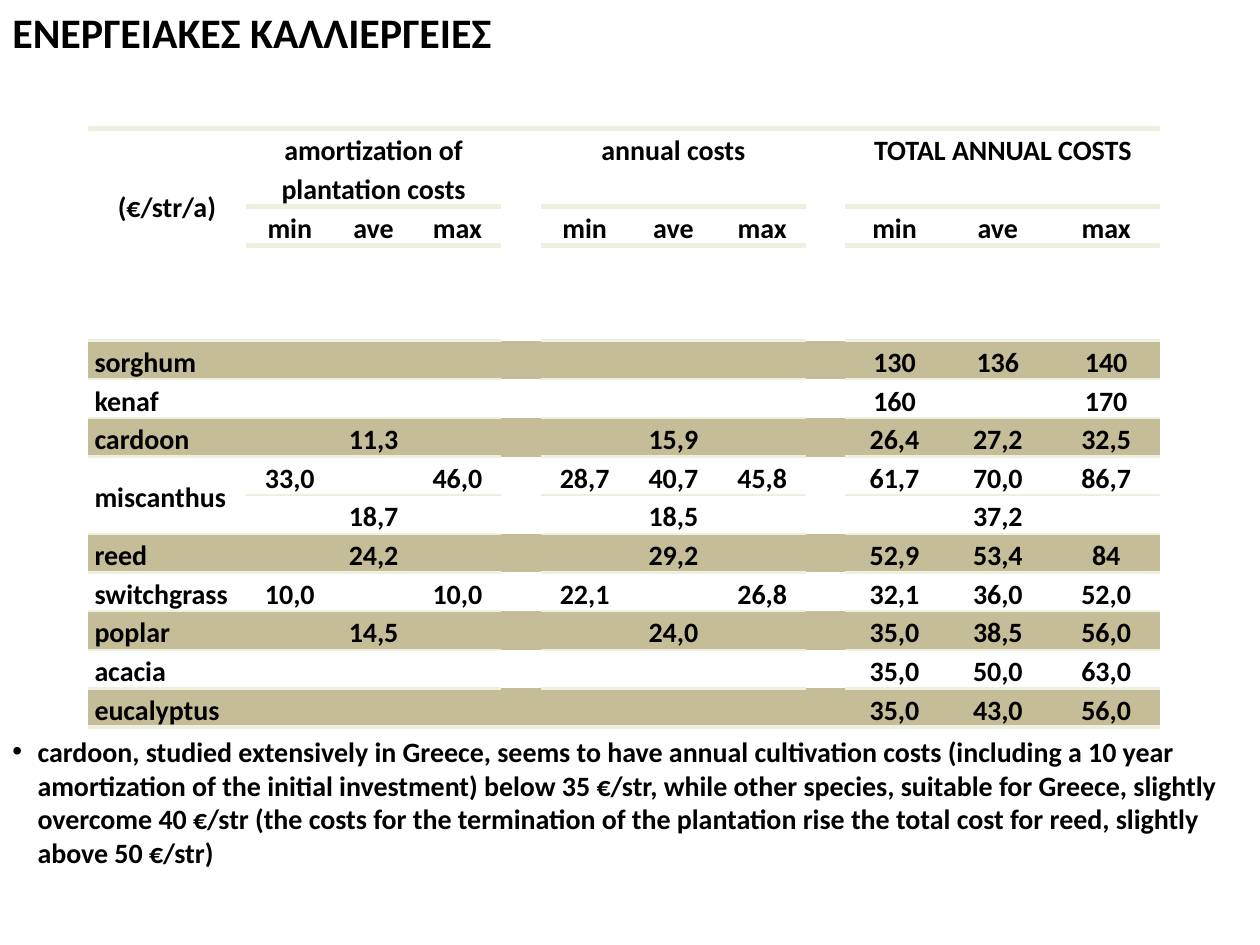
"""Build a slide comparing the annual costs of energy crops."""
from dataclasses import dataclass

from lxml import etree
from pptx import Presentation
from pptx.dml.color import RGBColor
from pptx.enum.text import MSO_ANCHOR, MSO_AUTO_SIZE, PP_ALIGN
from pptx.oxml.ns import qn
from pptx.util import Inches, Pt

CENTER, LEFT = PP_ALIGN.CENTER, PP_ALIGN.LEFT
TOP, MIDDLE = MSO_ANCHOR.TOP, MSO_ANCHOR.MIDDLE
GROW = MSO_AUTO_SIZE.SHAPE_TO_FIT_TEXT


@dataclass(frozen=True)
class Theme:
    font: str = "Calibri"
    ink: str = "000000"
    band: str = "C4BD97"
    rule: str = "EBF1DE"
    title_size: float = 24
    body_size: float = 16
    thick: float = 3
    thin: float = 1.5


THEME = Theme()
NO_STYLE = "{2D5ABB26-0587-4C30-8999-92F81FD0307C}"

TITLE = "ΕΝΕΡΓΕΙΑΚΕΣ ΚΑΛΛΙΕΡΓΕΙΕΣ"
NOTE = (
    "cardoon, studied extensively in Greece, seems to have annual cultivation costs "
    "(including a 10 year amortization of the initial investment) below 35 €/str, while "
    "other species, suitable for Greece, slightly overcome 40 €/str (the costs for the "
    "termination of the plantation rise the total cost for reed, slightly above 50 €/str)"
)
UNIT = "(€/str/a)"
GROUPS = {
    1: "amortization of plantation costs",
    5: "annual costs",
    9: "TOTAL ANNUAL COSTS",
}
MEASURES = ("min", "ave", "max")
CROPS = [
    ("sorghum", [("", "", ""), ("", "", ""), ("130", "136", "140")]),
    ("kenaf", [("", "", ""), ("", "", ""), ("160", "", "170")]),
    ("cardoon", [("", "11,3", ""), ("", "15,9", ""), ("26,4", "27,2", "32,5")]),
    ("miscanthus", [("33,0", "", "46,0"), ("28,7", "40,7", "45,8"), ("61,7", "70,0", "86,7")]),
    ("", [("", "18,7", ""), ("", "18,5", ""), ("", "37,2", "")]),
    ("reed", [("", "24,2", ""), ("", "29,2", ""), ("52,9", "53,4", "84")]),
    ("switchgrass", [("10,0", "", "10,0"), ("22,1", "", "26,8"), ("32,1", "36,0", "52,0")]),
    ("poplar", [("", "14,5", ""), ("", "24,0", ""), ("35,0", "38,5", "56,0")]),
    ("acacia", [("", "", ""), ("", "", ""), ("35,0", "50,0", "63,0")]),
    ("eucalyptus", [("", "", ""), ("", "", ""), ("35,0", "43,0", "56,0")]),
]
BANDED = {"sorghum", "cardoon", "reed", "poplar", "eucalyptus"}

COLUMN_WIDTHS = [1.25, 0.7, 0.63, 0.7, 0.31, 0.7, 0.71, 0.7, 0.31, 0.78, 0.86, 0.86]
HEADER_HEIGHTS = [0.62, 0.3, 0.71]
BODY_HEIGHT = 3.07
ROW_HEIGHTS = HEADER_HEIGHTS + [BODY_HEIGHT / len(CROPS)] * len(CROPS)
HEADER_COUNT = len(HEADER_HEIGHTS)
ROW_COUNT = len(ROW_HEIGHTS)
GAP_COLUMNS = {min(GROUPS) + 3, max(GROUPS) - 1}
SPLIT_ROW = HEADER_COUNT + [name for name, _ in CROPS].index("")


def add_span(para, text, size):
    span = para.add_run()
    span.text = text
    span.font.name = THEME.font
    span.font.size = Pt(size)
    span.font.bold = True
    span.font.color.rgb = RGBColor.from_string(THEME.ink)


def add_text_box(page, top, height, text, size, bulleted=False):
    box = page.shapes.add_textbox(0, Inches(top), Inches(10), Inches(height))
    frame = box.text_frame
    frame.word_wrap = True
    frame.auto_size = GROW
    para = frame.paragraphs[0]
    if bulleted:
        properties = para._p.get_or_add_pPr()
        properties.set("marL", str(Inches(0.2)))
        properties.set("indent", str(Inches(-0.2)))
        font = etree.SubElement(properties, qn("a:buFont"))
        font.set("typeface", "Arial")
        etree.SubElement(properties, qn("a:buChar")).set("char", "•")
    add_span(para, text, size)


def rule_width(boundary, column):
    if boundary in (0, ROW_COUNT):
        return THEME.thick
    if column in GAP_COLUMNS or boundary == SPLIT_ROW:
        return 0
    if boundary < HEADER_COUNT:
        return THEME.thick if column else 0
    return THEME.thin


def add_rule(cell, tag, width):
    if not width:
        return
    line = etree.SubElement(cell._tc.get_or_add_tcPr(), qn(tag))
    line.set("w", str(Pt(width)))
    fill = etree.SubElement(line, qn("a:solidFill"))
    etree.SubElement(fill, qn("a:srgbClr")).set("val", THEME.rule)


def style_cell(cell, row, column):
    cell.margin_left = cell.margin_right = Inches(0.05)
    cell.margin_top = cell.margin_bottom = 0
    add_rule(cell, "a:lnT", rule_width(row, column))
    add_rule(cell, "a:lnB", rule_width(row + 1, column))
    if row >= HEADER_COUNT and CROPS[row - HEADER_COUNT][0] in BANDED:
        cell.fill.solid()
        cell.fill.fore_color.rgb = RGBColor.from_string(THEME.band)
    else:
        cell.fill.background()


def write_cell(cell, text, align=CENTER, anchor=TOP):
    if not text:
        return
    cell.vertical_anchor = anchor
    para = cell.text_frame.paragraphs[0]
    para.alignment = align
    para.line_spacing = 1.15
    if align == CENTER:
        para.space_after = Pt(10)
    add_span(para, text, THEME.body_size)


def add_cost_table(page):
    frame = page.shapes.add_table(
        ROW_COUNT, len(COLUMN_WIDTHS), Inches(0.7), Inches(1.02),
        Inches(sum(COLUMN_WIDTHS)), Inches(sum(ROW_HEIGHTS)),
    )
    table = frame.table
    table.first_row = table.horz_banding = False
    table._tbl.tblPr.find(qn("a:tableStyleId")).text = NO_STYLE
    for column, width in zip(table.columns, COLUMN_WIDTHS):
        column.width = Inches(width)
    for row, height in zip(table.rows, ROW_HEIGHTS):
        row.height = Inches(height)
    for row in range(ROW_COUNT):
        for column in range(len(COLUMN_WIDTHS)):
            style_cell(table.cell(row, column), row, column)

    corner = table.cell(0, 0)
    corner.merge(table.cell(HEADER_COUNT - 1, 0))
    corner.margin_top = Inches(0.45)
    write_cell(corner, UNIT)
    table.cell(SPLIT_ROW - 1, 0).merge(table.cell(SPLIT_ROW, 0))

    for start, heading in GROUPS.items():
        table.cell(0, start).merge(table.cell(0, start + 2))
        write_cell(table.cell(0, start), heading)
        for offset, measure in enumerate(MEASURES):
            write_cell(table.cell(1, start + offset), measure)
    for row, (crop, costs) in enumerate(CROPS, HEADER_COUNT):
        write_cell(table.cell(row, 0), crop, LEFT, MIDDLE)
        for start, values in zip(GROUPS, costs):
            for offset, value in enumerate(values):
                write_cell(table.cell(row, start + offset), value)


def main():
    deck = Presentation()
    deck.slide_width, deck.slide_height = Inches(10), Inches(7.5)
    page = deck.slides.add_slide(deck.slide_layouts[6])
    add_text_box(page, 0, 0.5, TITLE, THEME.title_size)
    add_cost_table(page)
    add_text_box(page, 5.78, 1.18, NOTE, THEME.body_size, bulleted=True)
    deck.save("out.pptx")


if __name__ == "__main__":
    main()
